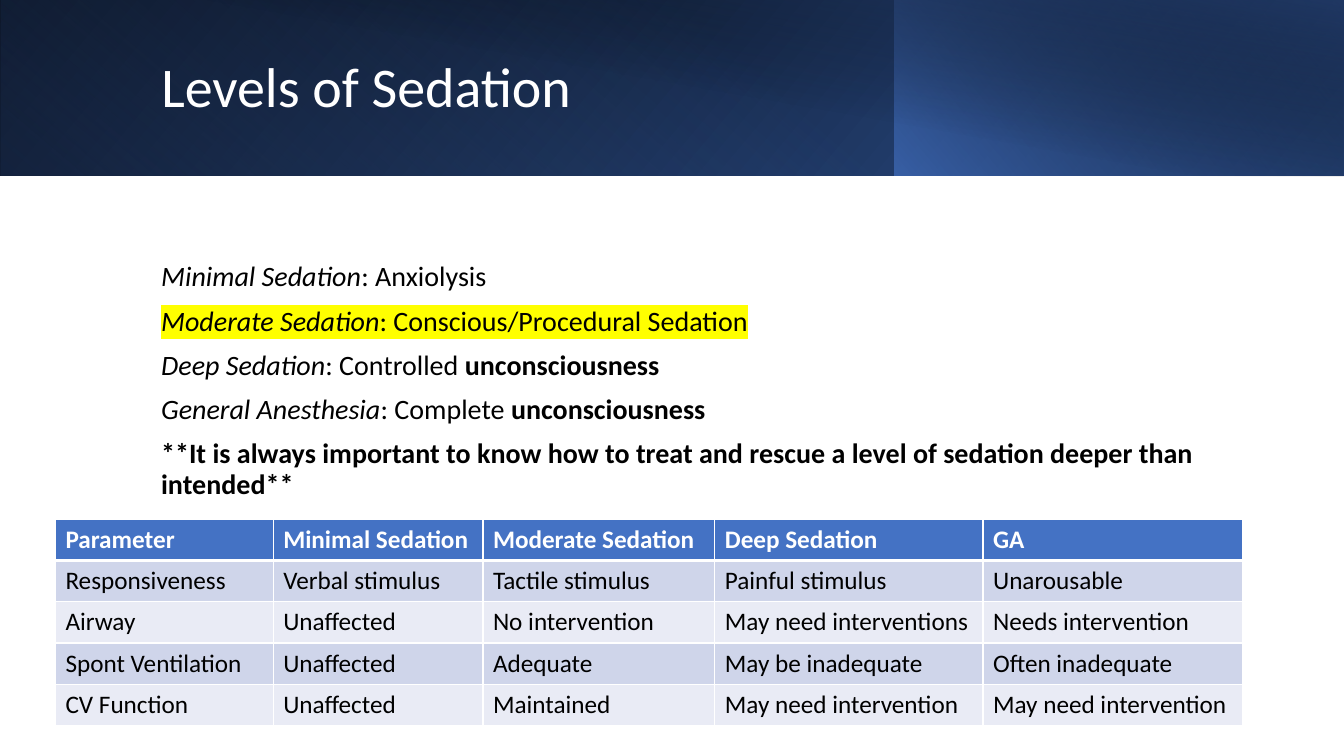
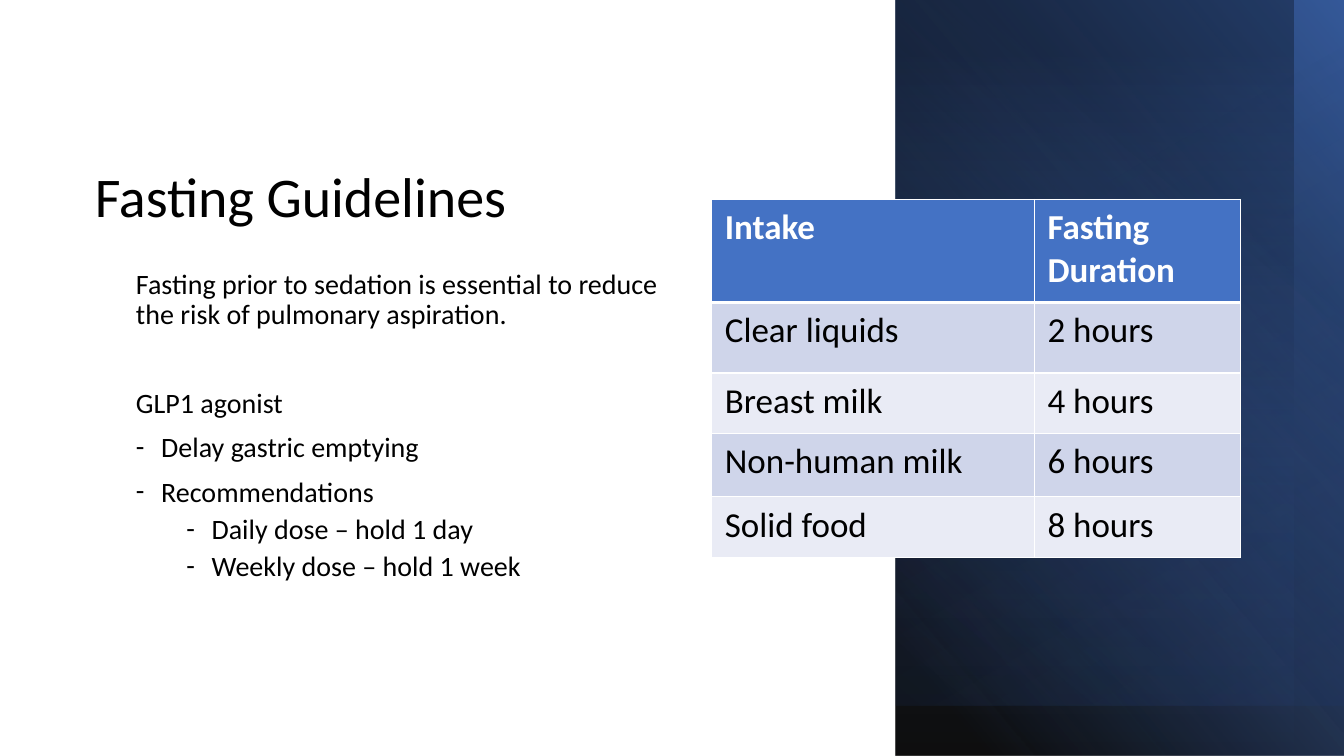
from lxml.etree import SubElement
from pptx import Presentation
from pptx.dml.color import RGBColor
from pptx.enum.shapes import MSO_SHAPE as Preset
from pptx.enum.text import MSO_ANCHOR as Anchor, MSO_AUTO_SIZE as AutoSize, PP_ALIGN as Align
from pptx.oxml.ns import qn
from pptx.util import Inches, Pt

FONT = "Calibri"
BLACK = RGBColor(0x00, 0x00, 0x00)
WHITE = RGBColor(0xFF, 0xFF, 0xFF)
BLUE = RGBColor(0x44, 0x72, 0xC4)
MID_BLUE = RGBColor(0x2F, 0x55, 0x97)
NAVY = RGBColor(0x20, 0x38, 0x64)
ROW_DARK = RGBColor(0xCF, 0xD5, 0xEA)
ROW_LIGHT = RGBColor(0xE9, 0xEB, 0xF5)
YELLOW = RGBColor(0xFF, 0xFF, 0x00)


def add_text(paragraph, text, size=20, color=BLACK, bold=False, italic=False, highlight=None):
    """Add one formatted run to a paragraph."""
    run = paragraph.add_run()
    run.text = text
    font = run.font
    font.size, font.bold, font.italic = Pt(size), bold, italic
    font.color.rgb = color
    font.name = FONT
    if highlight is not None:
        properties = run._r.get_or_add_rPr()
        mark = SubElement(properties, qn("a:highlight"))
        SubElement(mark, qn("a:srgbClr"), val=str(highlight))
        properties.find(qn("a:solidFill")).addnext(mark)


def add_bullet(paragraph, left, hanging=0.25):
    """Give a paragraph a hanging dash."""
    properties = paragraph._p.get_or_add_pPr()
    properties.set("marL", str(Inches(left)))
    properties.set("indent", str(-Inches(hanging)))
    SubElement(properties, qn("a:buFont"), typeface=FONT)
    SubElement(properties, qn("a:buChar"), char="-")


def add_borders(cell, **widths):
    """Draw white cell borders; widths in points by side, 1 by default."""
    properties = cell._tc.get_or_add_tcPr()
    for side in "LRTB":
        width = Pt(widths.get(side, 1))
        line = SubElement(properties, qn(f"a:ln{side}"), w=str(width))
        fill = SubElement(line, qn("a:solidFill"))
        SubElement(fill, qn("a:srgbClr"), val=str(WHITE))


class Deck:
    """The shared style and the current slide."""

    def __init__(self):
        self.presentation = Presentation()
        self.presentation.slide_width = Inches(13.33)
        self.presentation.slide_height = Inches(7.5)
        self.slide = None

    def new_slide(self):
        self.slide = self.presentation.slides.add_slide(self.presentation.slide_layouts[5])

    def band(self, box, angle, *stops, rotation=0, flip=True):
        """Gradient rectangle; each stop is (position %, colour, opacity %)."""
        shape = self.slide.shapes.add_shape(Preset.RECTANGLE, *map(Inches, box))
        shape.shadow.inherit = False
        shape.line.fill.background()
        shape.rotation = rotation
        if flip:
            shape.element.spPr.xfrm.set("flipH", "1")
        shape.fill.gradient()
        shape.fill.gradient_angle = 360 - angle
        for stop, (position, color, _) in zip(shape.fill.gradient_stops, stops):
            stop.position = position / 100
            stop.color.rgb = color
        colors = shape.element.spPr.iter(qn("a:srgbClr"))
        for element, (_, _, opacity) in zip(list(colors), stops):
            if opacity < 100:
                SubElement(element, qn("a:alpha"), val=str(opacity * 1000))

    def format_frame(self, shape, anchor):
        frame = shape.text_frame
        frame.word_wrap = True
        frame.auto_size = AutoSize.NONE
        frame.vertical_anchor = anchor
        return frame

    def title(self, text, box, anchor, color):
        title = self.slide.shapes.title
        title.left, title.top, title.width, title.height = map(Inches, box)
        paragraph = self.format_frame(title, anchor).paragraphs[0]
        paragraph.alignment = Align.LEFT
        paragraph.line_spacing = 0.9
        add_text(paragraph, text, size=40, color=color)
        # Bring the title in front of the bands
        title.element.getparent().append(title.element)

    def body(self, box, paragraphs, anchor=Anchor.TOP):
        """Each paragraph is (layout options, [(text, format), ...])."""
        shape = self.slide.shapes.add_textbox(*map(Inches, box))
        frame = self.format_frame(shape, anchor)
        for index, (options, runs) in enumerate(paragraphs):
            paragraph = frame.paragraphs[0] if index == 0 else frame.add_paragraph()
            if "bullet" in options:
                add_bullet(paragraph, options["bullet"])
            paragraph.level = options.get("level", 0)
            paragraph.line_spacing = 0.9
            if index:
                paragraph.space_before = Pt(options.get("before", 10))
            for text, style in runs:
                add_text(paragraph, text, **style)

    def table(self, left, top, widths, heights, rows, size, margins=(0.1, 0.05)):
        frame = self.slide.shapes.add_table(
            len(rows), len(widths), Inches(left), Inches(top),
            Inches(sum(widths)), Inches(sum(heights)))
        table = frame.table
        for column, width in zip(table.columns, widths):
            column.width = Inches(width)
        for row, height in zip(table.rows, heights):
            row.height = Inches(height)
        side, edge = map(Inches, margins)
        for row_index, texts in enumerate(rows):
            header = row_index == 0
            fill = BLUE if header else (ROW_LIGHT, ROW_DARK)[row_index % 2]
            for column_index, text in enumerate(texts):
                cell = table.cell(row_index, column_index)
                cell.margin_left = cell.margin_right = side
                cell.margin_top = cell.margin_bottom = edge
                add_borders(cell, B=3 if header else 1, T=3 if row_index == 1 else 1)
                cell.fill.solid()
                cell.fill.fore_color.rgb = fill
                add_text(cell.text_frame.paragraphs[0], text, size=size,
                         color=WHITE if header else BLACK, bold=header)


def build_sedation_levels(deck):
    deck.new_slide()
    # Header bands
    deck.band((0, 0, 13.33, 1.74), 140, (0, BLACK, 100), (100, MID_BLUE, 100))
    deck.band((0, 0, 8.88, 1.74), 230, (20, BLUE, 0), (100, NAVY, 55), rotation=180)
    deck.band((8.87, 0, 4.46, 1.74), 220, (0, BLUE, 66), (100, BLACK, 30))
    deck.band((0.5, 0, 12.83, 1.75), 280, (50, BLACK, 0), (99, NAVY, 52), flip=False)
    deck.title("Levels of Sedation", (1.5, 0.32, 10.82, 1.13), Anchor.MIDDLE, WHITE)

    # Definitions
    italic, bold = {"italic": True}, {"bold": True}
    marked = {"highlight": YELLOW}
    deck.body((1.5, 1.77, 10.63, 4.03), [
        ({}, [("Minimal Sedation", italic), (": Anxiolysis", {})]),
        ({}, [("Moderate Sedation", italic | marked),
              (": Conscious/Procedural Sedation", marked)]),
        ({}, [("Deep Sedation", italic), (": Controlled ", {}), ("unconsciousness", bold)]),
        ({}, [("General Anesthesia", italic), (": Complete ", {}), ("unconsciousness", bold)]),
        ({}, [("**It is always important to know how to treat and rescue a level of "
               "sedation deeper than intended**", bold)]),
    ], Anchor.MIDDLE)

    # Effects by level
    deck.table(0.55, 5.15, (2.16, 2.08, 2.3, 2.66, 2.57), [0.41] * 5, [
        ("Parameter", "Minimal Sedation", "Moderate Sedation", "Deep Sedation", "GA"),
        ("Responsiveness", "Verbal stimulus", "Tactile stimulus", "Painful stimulus",
         "Unarousable"),
        ("Airway", "Unaffected", "No intervention", "May need interventions",
         "Needs intervention"),
        ("Spont Ventilation", "Unaffected", "Adequate", "May be inadequate",
         "Often inadequate"),
        ("CV Function", "Unaffected", "Maintained", "May need intervention",
         "May need intervention"),
    ], size=18)


def build_fasting_guidelines(deck):
    deck.new_slide()
    deck.title("Fasting Guidelines", (0.84, 0.53, 5.82, 1.8), Anchor.BOTTOM, BLACK)

    # Fasting advice
    dash = {"bullet": 0.25}
    sub_dash = {"bullet": 0.75, "level": 1, "before": 5}
    advice = [
        ({}, "Fasting prior to sedation is essential to reduce the risk of pulmonary aspiration."),
        ({"before": 42}, "GLP1 agonist"),
        (dash, "Delay gastric emptying"),
        (dash, "Recommendations"),
        (sub_dash, "Daily dose – hold 1 day"),
        (sub_dash, "Weekly dose – hold 1 week"),
    ]
    deck.body((1.25, 2.63, 5.81, 3.87),
              [(options, [(text, {})]) for options, text in advice])

    # Side bands
    for width, height, angle, *stops in (
        (4.48, 7.5, 40, (8, BLACK, 94), (100, BLUE, 100)),
        (4.48, 7, 300, (31, NAVY, 0), (100, NAVY, 26)),
        (4.45, 7, 50, (0, BLUE, 0), (72, BLACK, 21)),
        (3.95, 7.5, 90, (0, BLUE, 0), (93, BLACK, 29)),
    ):
        deck.band((8.88, 0, width, height), angle, *stops, rotation=180)

    # Fasting times
    deck.table(7.06, 1.98, (3.2, 2.04), (1.02, 0.7, 0.6, 0.63, 0.6), [
        ("Intake", "Fasting Duration"),
        ("Clear liquids", "2 hours"),
        ("Breast milk", "4 hours"),
        ("Non-human milk", "6 hours"),
        ("Solid food", "8 hours"),
    ], size=25, margins=(0.13, 0.07))


def main():
    deck = Deck()
    build_sedation_levels(deck)
    build_fasting_guidelines(deck)
    deck.presentation.save("out.pptx")


if __name__ == "__main__":
    main()
